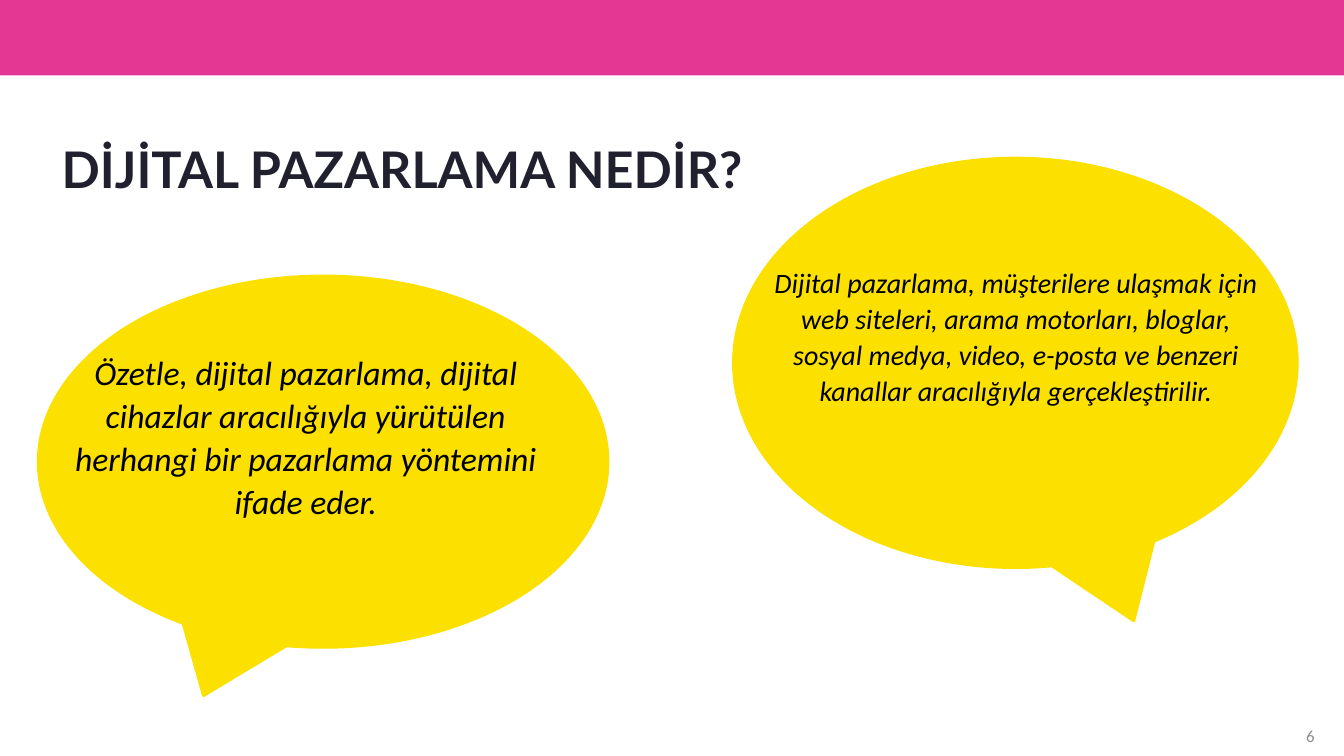
import pptx
import pptx.util
import pptx.dml.color
import pptx.enum.shapes
import pptx.enum.text

Cm = pptx.util.Cm
Pt = pptx.util.Pt
RGB = pptx.dml.color.RGBColor
Shape = pptx.enum.shapes.MSO_SHAPE
Align = pptx.enum.text.PP_ALIGN
Anchor = pptx.enum.text.MSO_ANCHOR

PINK = RGB(0xE4, 0x37, 0x94)
YELLOW = RGB(0xFB, 0xE0, 0x00)
INK = RGB(0x21, 0x20, 0x2E)
BLACK = RGB(0, 0, 0)
GREY = RGB(0x8C, 0x8C, 0x8C)

WIDTH, HEIGHT = 33.87, 19.05


def place(shape, box):
    shape.left, shape.top, shape.width, shape.height = map(Cm, box)


def write(shape, text, font, size, color, align, space=1.0, anchor=Anchor.TOP):
    """Fill a shape with one styled paragraph and return its font."""
    frame = shape.text_frame
    frame.text = text
    frame.word_wrap = True
    frame.auto_size = pptx.enum.text.MSO_AUTO_SIZE.NONE
    frame.vertical_anchor = anchor
    line = frame.paragraphs[0]
    line.alignment = align
    line.line_spacing = space
    style = line.runs[0].font
    style.name = font
    style.size = Pt(size)
    style.color.rgb = color
    return style


def add_band(slide):
    band = slide.shapes.add_shape(Shape.RECTANGLE, 0, 0, Cm(WIDTH), Cm(1.9))
    band.shadow.inherit = False
    band.fill.solid()
    band.fill.fore_color.rgb = PINK
    band.line.fill.background()


def add_title(slide, text):
    title = slide.shapes.title
    place(title, (1.3, 3.53, 31.27, 1.75))
    style = write(title, text, "Lato", 36, INK, Align.LEFT, 0.9)
    style.bold = True


def add_bubble(slide, box, tip, area, text, size):
    """Draw a callout whose tip lies left (-) or right (+) of its centre."""
    bubble = slide.shapes.add_shape(Shape.OVAL_CALLOUT, *map(Cm, box))
    bubble.adjustments[0] = tip
    bubble.adjustments[1] = 0.63
    bubble.shadow.inherit = False
    bubble.fill.solid()
    bubble.fill.fore_color.rgb = YELLOW
    bubble.line.color.rgb = YELLOW
    bubble.line.width = Pt(2.25)
    label = slide.shapes.add_textbox(*map(Cm, area))
    style = write(label, text, "Calibri", size, BLACK, Align.CENTER, 1.07)
    style.italic = True


def add_number(slide, text):
    label = slide.shapes.add_textbox(Cm(21.44), Cm(18.21), Cm(11.94), Cm(0.64))
    write(label, text, "Calibri", 12, GREY, Align.RIGHT, anchor=Anchor.MIDDLE)


def main():
    deck = pptx.Presentation()
    deck.slide_width, deck.slide_height = Cm(WIDTH), Cm(HEIGHT)
    slide = deck.slides.add_slide(deck.slide_layouts.get_by_name("Title Only"))
    add_band(slide)
    add_number(slide, "6")
    add_title(slide, "DİJİTAL PAZARLAMA NEDİR?")
    add_bubble(
        slide, (0.97, 6.96, 14.35, 9.35), -0.21, (1.57, 8.66, 12.27, 6.68),
        "Özetle, dijital pazarlama, dijital cihazlar aracılığıyla yürütülen "
        "herhangi bir pazarlama yöntemini ifade eder.", 24)
    add_bubble(
        slide, (18.49, 3.99, 14.2, 10.31), 0.21, (19.13, 6.5, 12.95, 8.26),
        "Dijital pazarlama, müşterilere ulaşmak için web siteleri, arama "
        "motorları, bloglar, sosyal medya, video, e-posta ve benzeri kanallar "
        "aracılığıyla gerçekleştirilir.", 20)
    deck.save("out.pptx")


if __name__ == "__main__":
    main()
